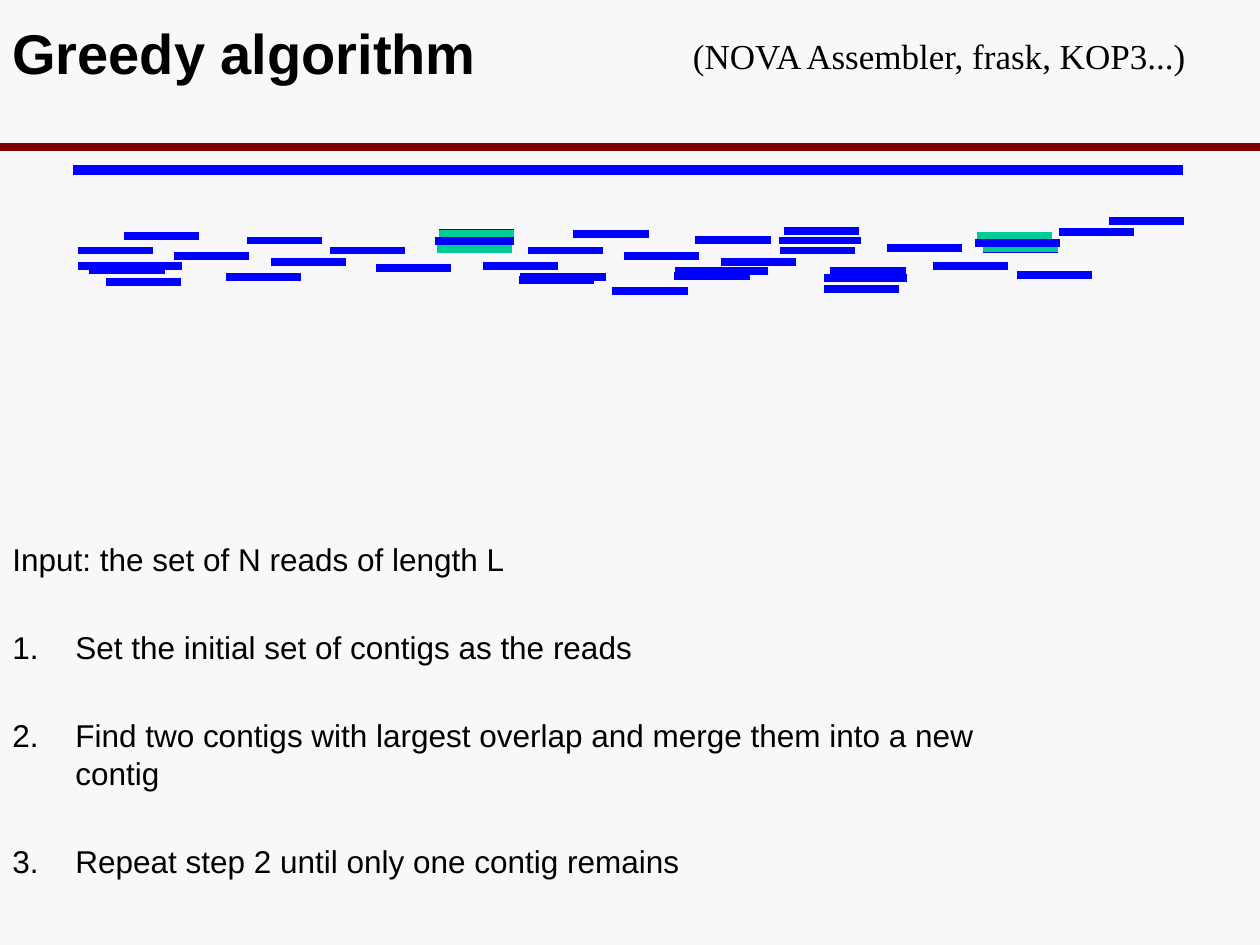
from lxml.etree import SubElement
from pptx import Presentation
from pptx.dml.color import RGBColor as Rgb
from pptx.enum.shapes import MSO_CONNECTOR as Connector
from pptx.enum.text import MSO_ANCHOR as Anchor
from pptx.oxml.ns import qn
from pptx.util import Cm, Pt

# Content (positions in cm)
TITLE = "Greedy algorithm"
ASSEMBLERS = "(NOVA Assembler, frask, KOP3...)"
INPUT = "Input: the set of N reads of length L"
STEPS = [
    "Set the initial set of contigs as the reads",
    "Find two contigs with largest overlap and merge them into a new contig",
    "Repeat step 2 until only one contig remains",
]
READ_LENGTH = 1.52
READS = [  # left end, height on the slide
    (2.49, 4.75), (3.51, 5.16), (4.55, 5.59), (4.98, 4.85), (5.46, 5.28),
    (6.65, 5.05), (10.46, 5.64), (8.81, 5.03), (8.84, 4.7), (9.73, 5.36),
    (1.57, 5.05), (11.56, 4.72), (12.57, 5.16), (13.59, 5.56), (14.02, 4.83),
    (14.53, 5.28), (15.72, 5.05), (16.74, 5.46), (17.88, 5), (15.8, 4.65),
    (18.8, 5.36), (20.5, 5.54), (21.34, 4.67), (22.35, 4.45), (10.64, 5.05),
    (1.8, 5.44), (19.81, 5.03), (19.69, 4.78), (2.13, 5.69), (12.34, 5.87),
    (16.61, 5.82), (7.57, 5.41),
]
OVERLAPPING = [(8.81, 5.02), (8.84, 4.71), (19.81, 5), (19.69, 4.75)]
CONTIGS = [  # left end, right end, height on the slide
    (8.76, 10.36, 4.86), (19.66, 21.36, 4.9), (10.49, 12.22, 5.59),
    (15.7, 17.35, 4.85), (16.61, 18.29, 5.61), (1.57, 3.66, 5.36),
    (13.61, 15.49, 5.46),
]
GENOME = (1.47, 23.85, 3.43)

THEME = {
    "background": Rgb(0xF8, 0xF8, 0xFA), "text": Rgb(0, 0, 0),
    "rule": Rgb(0x80, 0, 0), "read": Rgb(0, 0, 0xFF),
    "overlap": Rgb(0, 0xCC, 0x99),
    "sans": "Arial", "serif": "Times New Roman",
    "title": Pt(32), "aside": Pt(20), "body": Pt(18),
    "genome_width": Pt(6), "line_width": Pt(4.5), "step_gap": Pt(28.7),
}

deck = Presentation()
deck.slide_width, deck.slide_height = Cm(25.4), Cm(19.05)
slide = deck.slides.add_slide(deck.slide_layouts[6])
slide.background.fill.solid()
slide.background.fill.fore_color.rgb = THEME["background"]


def add_bar(left, right, y, color, width=THEME["line_width"]):
    bar = slide.shapes.add_connector(
        Connector.STRAIGHT, Cm(left), Cm(y), Cm(right), Cm(y))
    bar.line.color.rgb = color
    bar.line.width = width
    SubElement(bar._element.spPr, qn("a:effectLst"))


def add_text(left, top, width, height, lines, size, font, bold=False):
    frame = slide.shapes.add_textbox(
        Cm(left), Cm(top), Cm(width), Cm(height)).text_frame
    frame.word_wrap = True
    frame.text = "\n".join(lines)
    for paragraph in frame.paragraphs:
        paragraph.font.size, paragraph.font.name = size, font
        paragraph.font.bold = bold
        paragraph.font.color.rgb = THEME["text"]
    return frame


def indent(paragraph, left, first_line=0):
    properties = paragraph._p.get_or_add_pPr()
    properties.set("marL", str(Cm(left)))
    properties.set("indent", str(Cm(first_line)))
    return properties


# Heading, rule and aside
add_bar(0, 25.4, 2.97, THEME["rule"])
heading = add_text(0, 0, 14.8, 2.11, [TITLE], THEME["title"], THEME["sans"], True)
heading.vertical_anchor = Anchor.MIDDLE
aside = add_text(12.45, 0.58, 12.95, 1.12, [ASSEMBLERS],
                 THEME["aside"], THEME["serif"])
indent(aside.paragraphs[0], 1.27)

# Genome, reads, overlapping pairs and merged contigs, from back to front
add_bar(*GENOME, THEME["read"], THEME["genome_width"])
for places, color in ((READS, THEME["read"]), (OVERLAPPING, THEME["overlap"])):
    for left, y in places:
        add_bar(left, left + READ_LENGTH, y, color)
for contig in CONTIGS:
    add_bar(*contig, THEME["read"])

# Input and numbered steps
body = add_text(0, 10.76, 21.59, 8.1, [INPUT, *STEPS], THEME["body"], THEME["sans"])
for step in body.paragraphs[1:]:
    step.space_before = THEME["step_gap"]
    properties = indent(step, 1.27, -1.27)
    numbering = properties.makeelement(qn("a:buAutoNum"), {"type": "arabicPeriod"})
    properties.insert_element_before(numbering, "a:tabLst", "a:defRPr", "a:extLst")

deck.save("out.pptx")
